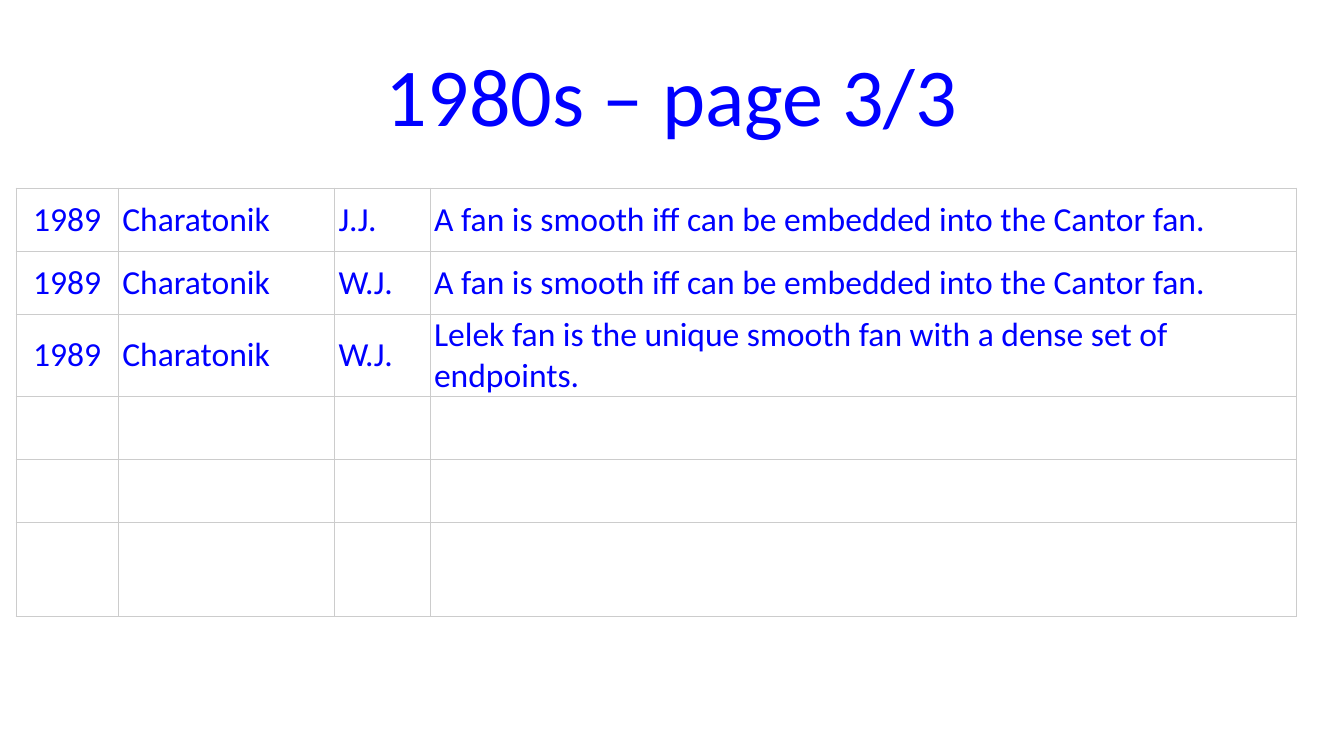
from lxml.etree import SubElement
from pptx import Presentation
from pptx.dml.color import RGBColor
from pptx.enum.text import MSO_ANCHOR, PP_ALIGN
from pptx.oxml.ns import qn
from pptx.util import Inches, Pt

COLS = [0.76, 1.61, 0.71, 6.45]
ROWS = [0.47] * 5 + [0.7]
RESULTS = [
    ("1989", "Charatonik", "J.J.", "A fan is smooth iff can be embedded into the Cantor fan."),
    ("1989", "Charatonik", "W.J.", "A fan is smooth iff can be embedded into the Cantor fan."),
    ("1989", "Charatonik", "W.J.",
     "Lelek fan is the unique smooth fan with a dense set of endpoints."),
]


def write(tf, text, size=18, color="0000FF", align=PP_ALIGN.LEFT):
    p = tf.paragraphs[0]
    p.alignment = align
    r = p.add_run()
    r.text = text
    r.font.name = "Calibri"
    r.font.size = Pt(size)
    r.font.color.rgb = RGBColor.from_string(color)


def add_borders(cell, color="CCCCCC", width=0.6):
    tcPr = cell._tc.get_or_add_tcPr()
    for side in ("a:lnL", "a:lnR", "a:lnT", "a:lnB"):
        ln = SubElement(tcPr, qn(side), w=str(Pt(width)))
        fill = SubElement(ln, qn("a:solidFill"))
        SubElement(fill, qn("a:srgbClr"), val=color)


prs = Presentation()
prs.slide_width = Inches(10)
prs.slide_height = prs.slide_width * 9 // 16
s = prs.slides.add_slide(prs.slide_layouts[5])

title = s.shapes.title
title.left, title.top = Inches(0.5), Inches(0.23)
title.width, title.height = Inches(9), Inches(0.94)
title.text_frame.vertical_anchor = MSO_ANCHOR.MIDDLE
write(title.text_frame, "1980s – page 3/3", size=44, align=PP_ALIGN.CENTER)

table = s.shapes.add_table(len(ROWS), len(COLS), Inches(0.12), Inches(1.4),
                           Inches(sum(COLS)), Inches(sum(ROWS))).table
table.first_row = table.horz_banding = False
for column, width in zip(table.columns, COLS):
    column.width = Inches(width)
for row, height in zip(table.rows, ROWS):
    row.height = Inches(height)

for cell in table.iter_cells():
    add_borders(cell)
    cell.fill.background()

for i, result in enumerate(RESULTS):
    for j, text in enumerate(result):
        cell = table.cell(i, j)
        cell.vertical_anchor = MSO_ANCHOR.MIDDLE
        cell.margin_left = cell.margin_right = Inches(0.03)
        cell.margin_top = cell.margin_bottom = 0
        write(cell.text_frame, text, align=PP_ALIGN.LEFT if j else PP_ALIGN.CENTER)

prs.save("out.pptx")
